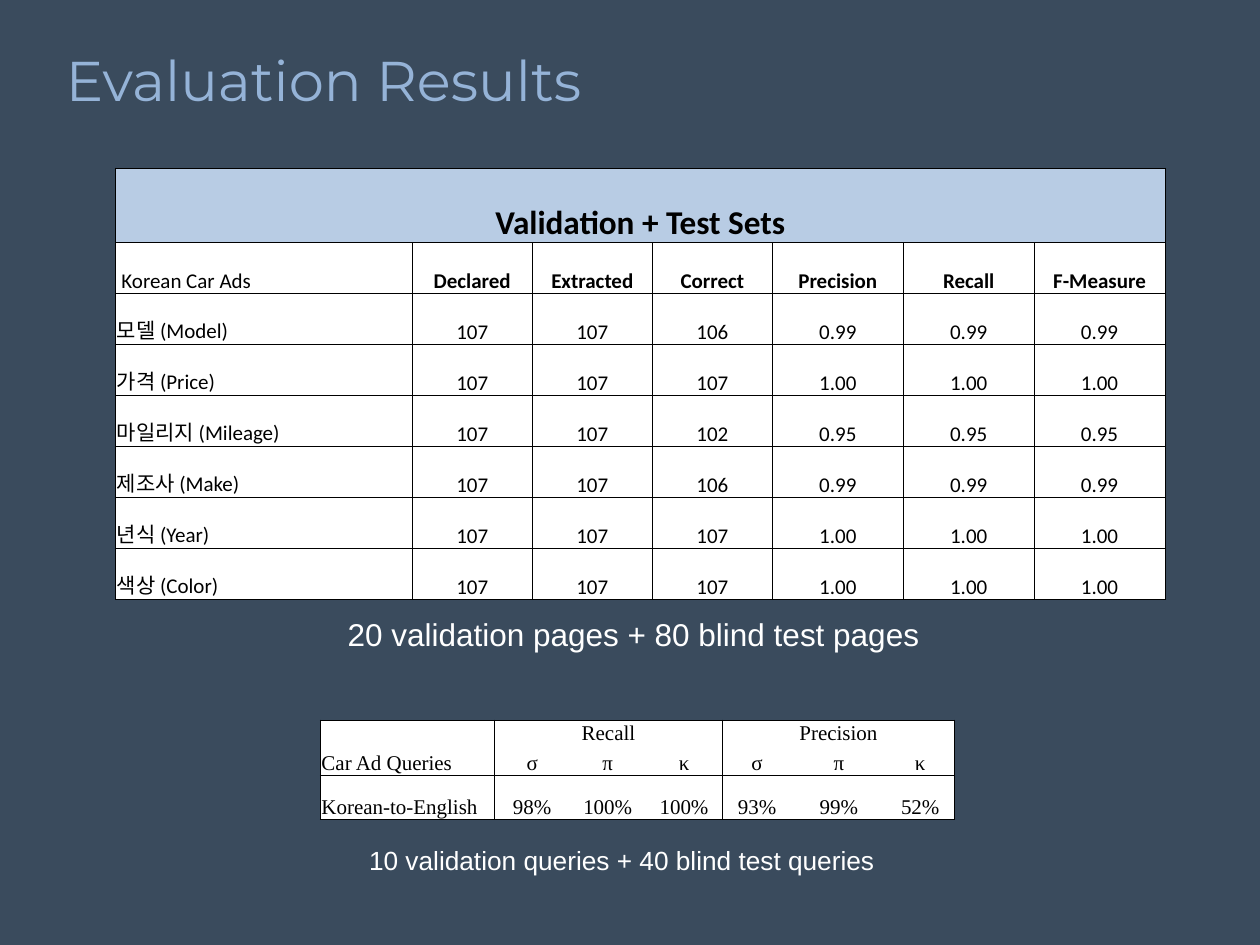
from lxml import etree
from pptx import Presentation
from pptx.dml.color import RGBColor
from pptx.enum import text
from pptx.oxml.ns import qn
from pptx.util import Pt

NAVY = RGBColor(0x3A, 0x4B, 0x5D)
TITLE_BLUE = RGBColor(0x95, 0xB3, 0xD7)
HEADER_BLUE = RGBColor(0xB8, 0xCC, 0xE4)
WHITE = RGBColor(0xFF, 0xFF, 0xFF)
BLACK = RGBColor(0, 0, 0)

FIELDS = [
    ("모델 (Model)", 106, "0.99"),
    ("가격 (Price)", 107, "1.00"),
    ("마일리지 (Mileage)", 102, "0.95"),
    ("제조사 (Make)", 106, "0.99"),
    ("년식 (Year)", 107, "1.00"),
    ("색상 (Color)", 107, "1.00"),
]
DECLARED = "107"
QUERY_ROWS = [
    ["Car Ad Queries", "Recall", "", "", "Precision", "", ""],
    ["", "σ", "π", "κ", "σ", "π", "κ"],
    ["Korean-to-English", "98%", "100%", "100%", "93%", "99%", "52%"],
]


def set_font(p, name, size, color, bold=False):
    p.font.name = name
    p.font.size = Pt(size)
    p.font.color.rgb = color
    p.font.bold = bold


def add_label(slide, content, box, font, size, color, wrap=False):
    sp = slide.shapes.add_textbox(*(Pt(v) for v in box))
    tf = sp.text_frame
    tf.word_wrap = wrap
    p = tf.paragraphs[0]
    p.text = content
    set_font(p, font, size, color)
    return tf


def set_borders(cell, sides):
    """Draw thin black lines on the sides named from L, R, T and B; clear the others."""
    tc_pr = cell._tc.get_or_add_tcPr()
    for i, side in enumerate("LRTB"):
        ln = etree.Element(qn(f"a:ln{side}"), w=str(Pt(0.5)))
        if side in sides:
            fill = etree.SubElement(ln, qn("a:solidFill"))
            etree.SubElement(fill, qn("a:srgbClr"), val=str(BLACK))
        else:
            etree.SubElement(ln, qn("a:noFill"))
        tc_pr.insert(i, ln)


def fill_cell(cell, content, font, size, centred, bold=False, color=WHITE):
    cell.margin_left = cell.margin_right = cell.margin_top = Pt(0.72)
    cell.margin_bottom = Pt(0)
    cell.vertical_anchor = text.MSO_ANCHOR.BOTTOM
    cell.fill.solid()
    cell.fill.fore_color.rgb = color
    p = cell.text_frame.paragraphs[0]
    p.text = content
    p.alignment = text.PP_ALIGN.CENTER if centred else text.PP_ALIGN.LEFT
    set_font(p, font, size, BLACK, bold)


def add_grid(slide, left, top, widths, heights):
    frame = slide.shapes.add_table(len(heights), len(widths), Pt(left), Pt(top),
                                   Pt(sum(widths)), Pt(sum(heights)))
    table = frame.table
    table.first_row = table.horz_banding = False
    for column, width in zip(table.columns, widths):
        column.width = Pt(width)
    for row, height in zip(table.rows, heights):
        row.height = Pt(height)
    return table


def add_extraction_table(slide):
    rows = [["Validation + Test Sets"] + [""] * 6,
            [" Korean Car Ads", "Declared", "Extracted", "Correct",
             "Precision", "Recall", "F-Measure"]]
    rows += [[name, DECLARED, DECLARED, str(correct)] + [score] * 3
             for name, correct, score in FIELDS]
    table = add_grid(slide, 66, 96, [169.6] + [68.6] * 3 + [74.8] * 3,
                     [42.8] + [29.15] * 7)
    for r, values in enumerate(rows):
        for c, value in enumerate(values):
            cell = table.cell(r, c)
            banner = r == 0
            fill_cell(cell, value, "Calibri", 19 if banner else 12, banner or c > 0,
                      banner or (r == 1 and c > 0), HEADER_BLUE if banner else WHITE)
            set_borders(cell, "LRTB")
    table.cell(0, 0).merge(table.cell(0, 6))


def add_query_table(slide):
    table = add_grid(slide, 183, 411.5, [99.5, 43.2, 43.2, 44, 39.5, 54, 39],
                     [15.8, 15.8, 25])
    for r, values in enumerate(QUERY_ROWS):
        for c, value in enumerate(values):
            cell = table.cell(r, c)
            fill_cell(cell, value, "Times New Roman", 12, c > 0)
            sides = "T" if r == 0 else "B" if r == 1 else "TB"
            if c in (0, 1, 4):
                sides += "L"
            if c in (0, 3, 6):
                sides += "R"
            set_borders(cell, sides)
    table.cell(0, 0).merge(table.cell(1, 0))
    for first in (1, 4):
        group = table.cell(0, first)
        group.vertical_anchor = text.MSO_ANCHOR.TOP
        group.merge(table.cell(0, first + 2))
        set_borders_right = group._tc.tcPr.find(qn("a:lnR"))
        group._tc.tcPr.remove(set_borders_right)
        for ln in group._tc.tcPr.findall(qn("a:lnL")) + group._tc.tcPr.xpath("a:lnT|a:lnB"):
            group._tc.tcPr.remove(ln)
        set_borders(group, "LRT")


def main():
    prs = Presentation()
    prs.slide_width, prs.slide_height = Pt(720), Pt(540)
    slide = prs.slides.add_slide(prs.slide_layouts[6])
    slide.background.fill.solid()
    slide.background.fill.fore_color.rgb = NAVY

    title = add_label(slide, "Evaluation Results", (30.5, 12.5, 516, 66),
                      "Montserrat", 32, TITLE_BLUE, wrap=True)
    title.vertical_anchor = text.MSO_ANCHOR.MIDDLE
    add_extraction_table(slide)
    add_query_table(slide)
    add_label(slide, "10 validation queries + 40 blind test queries",
              (203.8, 479, 318, 25), "Arial", 15, WHITE)
    add_label(slide, "20 validation pages + 80 blind test pages",
              (191.5, 348, 342, 30), "Arial", 18, WHITE)
    prs.save("out.pptx")


if __name__ == "__main__":
    main()
